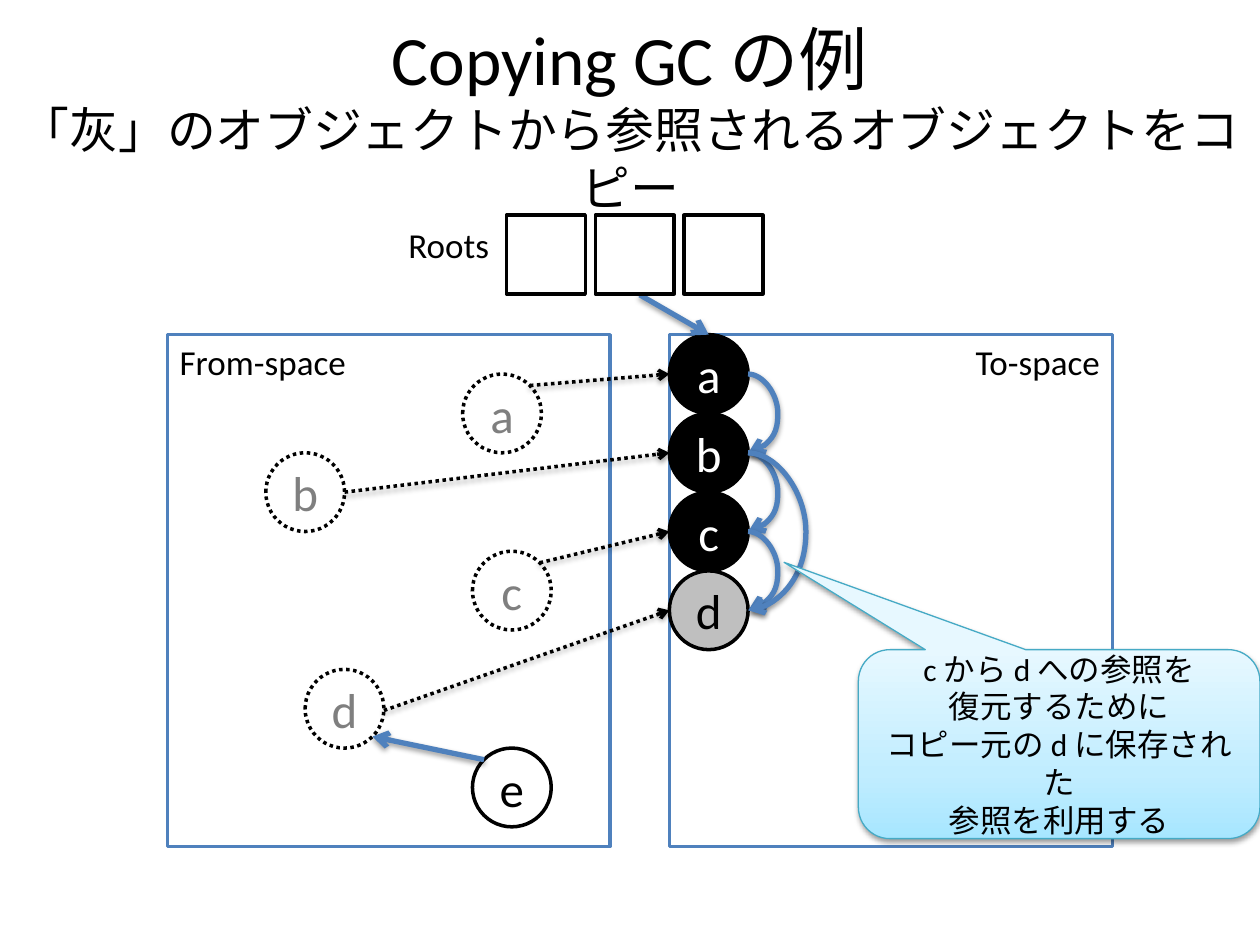
from copy import deepcopy

from pptx import Presentation
from pptx.dml.color import RGBColor
from pptx.enum.dml import MSO_LINE
from pptx.enum.shapes import MSO_CONNECTOR, MSO_SHAPE
from pptx.enum.text import MSO_ANCHOR, MSO_AUTO_SIZE, PP_ALIGN
from pptx.oxml import parse_xml
from pptx.oxml.ns import nsdecls, qn
from pptx.util import Pt

BLACK = RGBColor(0, 0, 0)
WHITE = RGBColor(0xFF, 0xFF, 0xFF)
GRAY = RGBColor(0xBF, 0xBF, 0xBF)
FADED = RGBColor(0x7F, 0x7F, 0x7F)
BLUE = RGBColor(0x4F, 0x81, 0xBD)
TEAL = RGBColor(0x46, 0xAA, 0xC5)
SKY = [(0, RGBColor(0xA7, 0xE6, 0xFF)),
       (0.35, RGBColor(0xC1, 0xED, 0xFF)),
       (1, RGBColor(0xE7, 0xF8, 0xFF))]

SIZE = 45  # diameter of an object, side of a root cell
TOP = 191.25  # upper edge of both spaces
FROM_X, TO_X = 95.62, 382.5
SHADOW = (
    f'<a:effectLst {nsdecls("a")}><a:outerShdw blurRad="{Pt(3.1)}" '
    f'dist="{Pt(1.6)}" dir="5400000" rotWithShape="0"><a:srgbClr val="000000">'
    '<a:alpha val="38000"/></a:srgbClr></a:outerShdw></a:effectLst>')


def put(item, **values):
    for name, value in values.items():
        setattr(item, name, value)


def set_line(line, color, width, dotted=False):
    line.color.rgb = color
    line.width = Pt(width)
    if dotted:
        line.dash_style = MSO_LINE.ROUND_DOT


def add_run(para, text, size, color=BLACK):
    run = para.add_run()
    put(run, text=text)
    put(run.font, name="Calibri", size=Pt(size))
    run.font.color.rgb = color


def write(frame, lines, size, color=BLACK, align=PP_ALIGN.CENTER,
          anchor=MSO_ANCHOR.MIDDLE):
    put(frame, word_wrap=True, vertical_anchor=anchor)
    for i, text in enumerate(lines):
        para = frame.add_paragraph() if i else frame.paragraphs[0]
        para.alignment = align
        add_run(para, text, size, color)


def add_box(slide, kind, x, y, w, h, fill, line, width=2, dotted=False):
    box = slide.shapes.add_shape(kind, Pt(x), Pt(y), Pt(w), Pt(h))
    box.shadow.inherit = False
    if fill:
        box.fill.solid()
        box.fill.fore_color.rgb = fill
    set_line(box.line, line, width, dotted)
    return box


def add_title(slide):
    title = slide.shapes.title
    put(title, left=Pt(0), top=Pt(21.6), width=Pt(720), height=Pt(90))
    frame = title.text_frame
    put(frame, auto_size=MSO_AUTO_SIZE.NONE)
    write(frame, ["Copying GC の例"], 39.6)
    para = frame.paragraphs[0]
    para.add_line_break()
    add_run(para, "「灰」のオブジェクトから参照されるオブジェクトをコピー", 27.9)


def add_space(slide, x, name, align):
    box = add_box(slide, MSO_SHAPE.RECTANGLE, x, TOP, 253.13, 292.5,
                  WHITE, BLUE)
    write(box.text_frame, [name], 20, align=align, anchor=MSO_ANCHOR.TOP)


def add_node(slide, name, x, y, fill, color, dotted=False):
    node = add_box(slide, MSO_SHAPE.OVAL, x, y, SIZE, SIZE, fill, BLACK,
                   dotted=dotted)
    write(node.text_frame, [name], 28, color)


def add_arrow(slide, start, end, color=BLUE, width=3, dotted=False,
              kind=MSO_CONNECTOR.STRAIGHT):
    arrow = slide.shapes.add_connector(kind, *map(Pt, start + end))
    set_line(arrow.line, color, width, dotted)
    props = arrow.element.spPr
    props.find(qn("a:ln")).append(
        parse_xml(f'<a:tailEnd {nsdecls("a")} type="arrow"/>'))
    props.append(parse_xml(SHADOW))
    return arrow


def add_curve(slide, first, last, bulge):
    """Link two slots of the to-space; the bend is a multiple of the width."""
    x, thin = TO_X + SIZE, 0.12
    start, end = (x, mid(first)), (x + thin, mid(last))
    curve = add_arrow(slide, start, end, kind=MSO_CONNECTOR.CURVE)
    bend = round(bulge / thin * 100000)
    curve.element.spPr.find(".//" + qn("a:avLst")).append(
        parse_xml(f'<a:gd {nsdecls("a")} name="adj1" fmla="val {bend}"/>'))


def mid(slot):
    return TOP + (slot + 0.5) * SIZE


def add_callout(slide):
    note = add_box(slide, MSO_SHAPE.ROUNDED_RECTANGULAR_CALLOUT,
                   490.5, 371.25, 229.5, 108, None, TEAL, 0.75)
    for i, value in enumerate((-0.685, -0.962, 0.167)):
        note.adjustments[i] = value
    note.fill.gradient()
    note.fill.gradient_angle = 90
    props = note.element.spPr
    stops = props.find(".//" + qn("a:gsLst"))
    stops.insert(1, deepcopy(stops[0]))
    for stop, (place, color) in zip(note.fill.gradient_stops, SKY):
        stop.position = place
        stop.color.rgb = color
    props.replace(props.find(qn("a:effectLst")), parse_xml(SHADOW))
    write(note.text_frame, ["c から d への参照を", "復元するために",
                            "コピー元の d に保存された", "参照を利用する"], 18)


def add_roots(slide):
    label = slide.shapes.add_textbox(Pt(196.5), Pt(124), Pt(90), Pt(31.5))
    write(label.text_frame, ["Roots"], 20, align=PP_ALIGN.RIGHT,
          anchor=MSO_ANCHOR.TOP)
    for i in range(3):
        add_box(slide, MSO_SHAPE.RECTANGLE, 289.5 + 50.7 * i, 123, SIZE, SIZE,
                WHITE, BLACK)


def main():
    deck = Presentation()
    put(deck, slide_width=Pt(720), slide_height=Pt(540))
    slide = deck.slides.add_slide(deck.slide_layouts[5])
    add_title(slide)
    add_space(slide, FROM_X, "From-space", PP_ALIGN.LEFT)
    add_space(slide, TO_X, "To-space", PP_ALIGN.RIGHT)

    for slot, name in enumerate("abcd"):
        gray = name == "d"
        add_node(slide, name, TO_X, TOP + slot * SIZE,
                 GRAY if gray else BLACK, BLACK if gray else WHITE)
    add_node(slide, "e", 270, 427.5, WHITE, BLACK)

    add_arrow(slide, (365.6, 168.5), (405, TOP))
    for first, last, bulge in ((0, 1, 18), (1, 2, 18), (2, 3, 18), (1, 3, 35)):
        add_curve(slide, first, last, bulge)
    add_arrow(slide, (276.6, 434.1), (212.8, 420.9))

    moved = [("a", 264.4, 213.75, (302.8, 220.3)),
             ("b", 151.9, 258.75, (196.9, 281.25)),
             ("c", 270, 315, (308.4, 321.6)),
             ("d", 174.4, 382.5, (219.4, 406))]
    for name, x, y, _ in moved:
        add_node(slide, name, x, y, WHITE, FADED, dotted=True)
    for slot, (*_, start) in enumerate(moved):
        add_arrow(slide, start, (TO_X, mid(slot)), BLACK, 2, dotted=True)

    add_callout(slide)
    add_roots(slide)
    deck.save("out.pptx")


if __name__ == "__main__":
    main()
